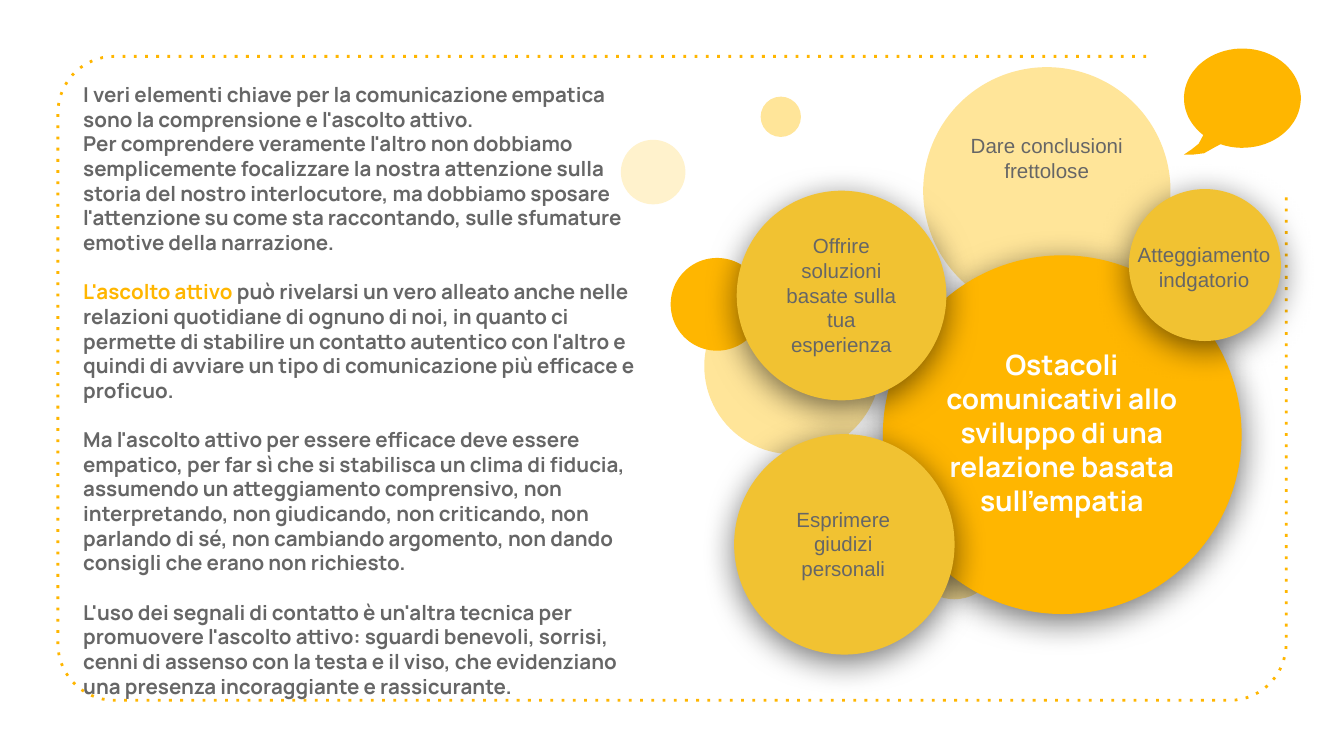
from math import cos, radians, sin

from lxml import etree
from pptx import Presentation
from pptx.dml.color import RGBColor
from pptx.enum.dml import MSO_LINE
from pptx.enum.shapes import MSO_SHAPE
from pptx.enum.text import MSO_ANCHOR, MSO_AUTO_SIZE, PP_ALIGN
from pptx.oxml.ns import qn
from pptx.util import Pt

OVAL = MSO_SHAPE.OVAL
TOP, MIDDLE = MSO_ANCHOR.TOP, MSO_ANCHOR.MIDDLE
LEFT, CENTER = PP_ALIGN.LEFT, PP_ALIGN.CENTER
NO_AUTOFIT = MSO_AUTO_SIZE.NONE
DOTTED = MSO_LINE.ROUND_DOT

COLORS = {
    "amber": "FFB600",
    "gold": "F1C232",
    "sand": "FFE599",
    "cream": "FFF2CC",
    "gray": "666666",
    "white": "FFFFFF",
    "black": "000000",
}
RGB = {name: RGBColor.from_string(value) for name, value in COLORS.items()}

LABEL = {"name": "Arial", "size": Pt(11), "bold": False}
BODY = {"name": "Manrope", "size": Pt(11), "bold": True}
HEADING = {"name": "Manrope", "size": Pt(15), "bold": True}


def write_text(shape, box, paragraphs, font, spacing, align=CENTER, anchor=MIDDLE, inset=7.2):
    """Place a shape and fill it with paragraphs of (text, color) runs."""
    shape.left, shape.top, shape.width, shape.height = map(Pt, box)
    frame = shape.text_frame
    frame_format = {
        "word_wrap": True, "auto_size": NO_AUTOFIT, "vertical_anchor": anchor,
        "margin_left": Pt(7.2), "margin_right": Pt(7.2),
        "margin_top": Pt(inset), "margin_bottom": Pt(inset),
    }
    for name, value in frame_format.items():
        setattr(frame, name, value)
    for index, runs in enumerate(paragraphs):
        paragraph = frame.add_paragraph() if index else frame.paragraphs[0]
        paragraph_format = {"alignment": align, "line_spacing": Pt(spacing), "space_before": Pt(0)}
        for name, value in paragraph_format.items():
            setattr(paragraph, name, value)
        for text, color in runs:
            run = paragraph.add_run()
            run.text = text
            for name, value in font.items():
                setattr(run.font, name, value)
            run.font.color.rgb = RGB[color]


def add_circle(left, top, diameter, color, shadow=False):
    circle = slide.shapes.add_shape(OVAL, Pt(left), Pt(top), Pt(diameter), Pt(diameter))
    circle.shadow.inherit = False
    circle.fill.solid()
    circle.fill.fore_color.rgb = RGB[color]
    circle.line.fill.background()
    if shadow:
        effects = circle.element.spPr.find(qn("a:effectLst"))
        outer = etree.SubElement(effects, qn("a:outerShdw"), blurRad=str(Pt(18)),
                                 dist=str(Pt(4)), dir="5400000", algn="bl", rotWithShape="0")
        tint = etree.SubElement(outer, qn("a:srgbClr"), val=COLORS["black"])
        etree.SubElement(tint, qn("a:alpha"), val="55000")
    return circle


presentation = Presentation()
presentation.slide_width, presentation.slide_height = Pt(720), Pt(405)
slide = presentation.slides.add_slide(presentation.slide_layouts[1])
title, body = slide.placeholders

# Dotted frame, open at the top right corner
left, top, right, bottom, radius = 31, 30.2, 689, 375.2, 30.3
corners = [
    (left + radius, top + radius, 270),
    (left + radius, bottom - radius, 180),
    (right - radius, bottom - radius, 90),
]
frame_points = [
    (x + radius * cos(radians(start - step)), y + radius * sin(radians(start - step)))
    for x, y, start in corners for step in range(0, 91, 6)
]
frame_points.append((right, 105))
builder = slide.shapes.build_freeform(Pt(614), Pt(top), scale=1.0)
builder.add_line_segments([(Pt(x), Pt(y)) for x, y in frame_points], close=False)
dotted_frame = builder.convert_to_shape()
dotted_frame.shadow.inherit = False
dotted_frame.fill.background()
dotted_frame.line.color.rgb = RGB["amber"]
dotted_frame.line.width = Pt(1.5)
dotted_frame.line.dash_style = DOTTED
dotted_frame.line._ln.find(qn("a:prstDash")).set("val", "dot")

# Decorative circles
for x, y, diameter, color in [
    (488.2, 275, 46.1, "sand"),
    (332.6, 74.9, 34.6, "cream"),
    (377.3, 149, 94.3, "sand"),
    (494.6, 36, 132.5, "sand"),
    (359.3, 138.2, 49.7, "amber"),
    (407.5, 51.8, 21.6, "sand"),
]:
    add_circle(x, y, diameter, color)

# Central circle with the heading
center_circle = add_circle(473, 136.8, 192.2, "amber", shadow=True)
heading = "Ostacoli comunicativi allo sviluppo di una relazione basata sull’empatia"
write_text(title, (495.4, 185.8, 146.9, 91.4), [[(heading, "white")]], HEADING, 18.1)
title.fill.solid()
title.fill.fore_color.rgb = RGB["amber"]
center_circle.element.addnext(title.element)

# Obstacle circles: circle geometry, label box, label
for circle, box, label in [
    ((394.7, 102.2, 112.3), (412.6, 121, 76.3, 74.2), "Offrire soluzioni basate sulla tua esperienza"),
    ((393.3, 232.6, 118.1), (409.7, 254.2, 84.2, 74.2), "Esprimere giudizi personali"),
    ((604.8, 101.3, 81.4), (601.2, 115.9, 87.8, 54), "Atteggiamento indgatorio"),
]:
    add_circle(*circle, "gold", shadow=True)
    write_text(slide.shapes.add_textbox(0, 0, 0, 0), box, [[(label, "gray")]], LABEL, 13.2)

# Speech bubble: elliptical outline closed by a curved tail
bubble_points = [
    (665.6 + 31.3 * cos(radians(angle)), 52.6 + 26.6 * sin(radians(angle)))
    for angle in range(132, 473, 5)
]
bubble_points += [(650.2, 79.2), (645.1, 82.1), (639.4, 82.8), (634.3, 82.8), (638.6, 79.9), (642.2, 77)]
bubble_points = [(Pt(x), Pt(y)) for x, y in bubble_points]
builder = slide.shapes.build_freeform(*bubble_points[0], scale=1.0)
builder.add_line_segments(bubble_points[1:], close=True)
bubble = builder.convert_to_shape()
bubble.shadow.inherit = False
bubble.fill.solid()
bubble.fill.fore_color.rgb = RGB["amber"]
bubble.line.fill.background()

# Body text
paragraphs = [
    [("I veri elementi chiave per la comunicazione empatica sono la comprensione e l'ascolto attivo.", "gray")],
    [("Per comprendere veramente l'altro non dobbiamo semplicemente focalizzare la nostra attenzione "
      "sulla storia del nostro interlocutore, ma dobbiamo sposare l'attenzione su come sta raccontando, "
      "sulle sfumature emotive della narrazione.", "gray")],
    [("L'ascolto attivo ", "amber"),
     ("può rivelarsi un vero alleato anche nelle relazioni quotidiane di ognuno di noi, in quanto ci "
      "permette di stabilire un contatto autentico con l'altro e quindi di avviare un tipo di "
      "comunicazione più efficace e proficuo.", "gray")],
    [("Ma l'ascolto attivo per essere efficace deve essere empatico, per far sì che si stabilisca un "
      "clima di fiducia, assumendo un atteggiamento comprensivo, non interpretando, non giudicando, "
      "non criticando, non parlando di sé, non cambiando argomento, non dando consigli che erano "
      "non richiesto.", "gray")],
    [("L'uso dei segnali di contatto è un'altra tecnica per promuovere l'ascolto attivo: sguardi "
      "benevoli, sorrisi, cenni di assenso con la testa e il viso, che evidenziano una presenza "
      "incoraggiante e rassicurante.", "gray")],
]
write_text(body, (37.4, 36.7, 315.4, 338.4), paragraphs, BODY, 13.2, align=LEFT, anchor=TOP)
for paragraph in body.text_frame.paragraphs[2:]:
    paragraph.space_before = Pt(13.2)
for properties in body.element.iter(qn("a:pPr")):
    properties.set("marL", "0")
    properties.set("indent", "0")
    etree.SubElement(properties, qn("a:buNone"))
bubble.element.addnext(body.element)

# Label of the large pale circle
write_text(slide.shapes.add_textbox(0, 0, 0, 0), (512.6, 67.7, 96.5, 33.8),
           [[("Dare conclusioni", "gray")], [("frettolose", "gray")]],
           LABEL, 13.2, anchor=TOP, inset=3.6)

presentation.save("out.pptx")
